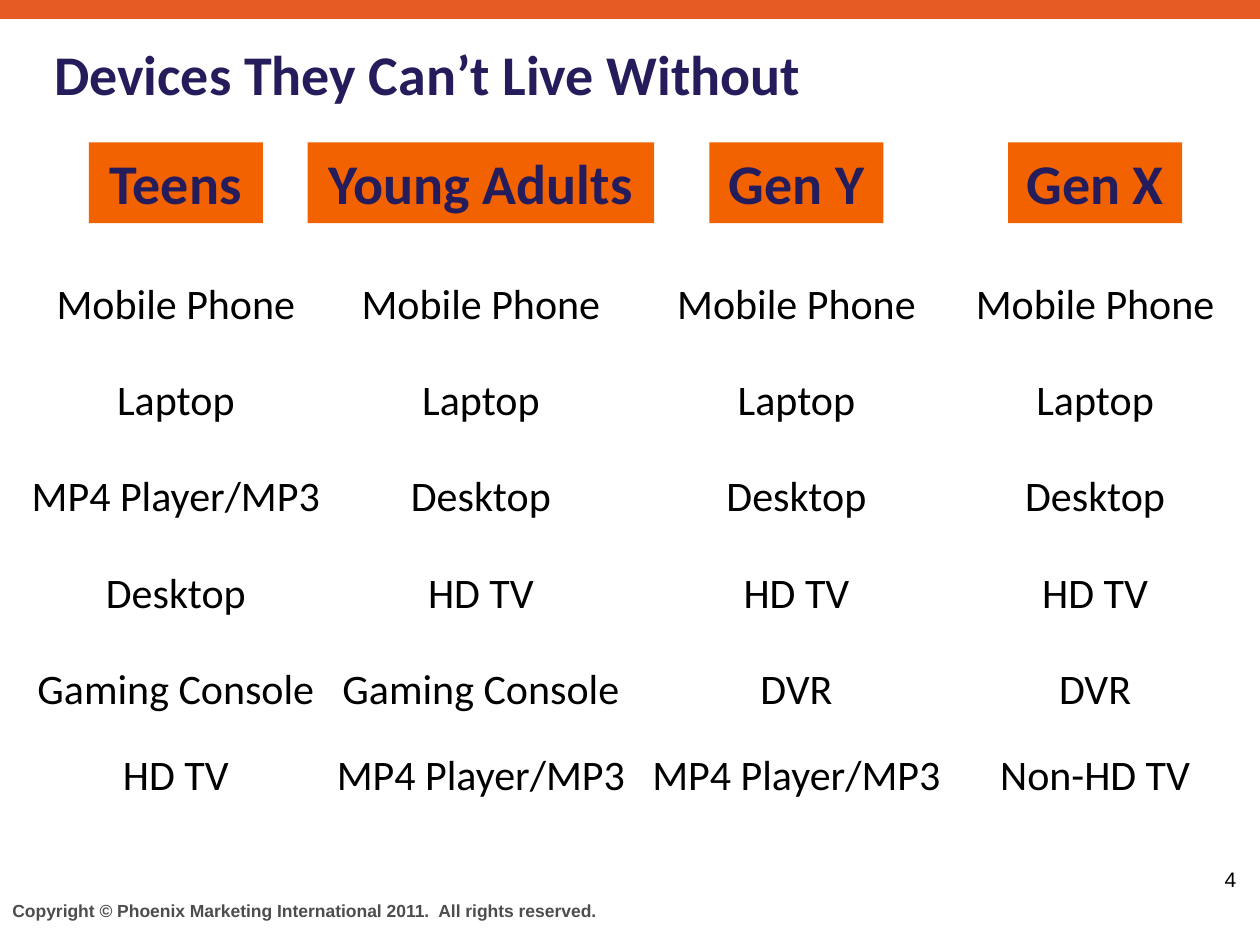
import pptx
import pptx.dml.color
import pptx.enum.shapes
import pptx.enum.text
import pptx.util

Pt = pptx.util.Pt
ALIGN = pptx.enum.text.PP_ALIGN
ANCHOR = pptx.enum.text.MSO_ANCHOR
GROW = pptx.enum.text.MSO_AUTO_SIZE.SHAPE_TO_FIT_TEXT

COLOURS = {"band": "E65B24", "header": "F26200", "navy": "241C5B",
           "black": "000000", "grey": "4D4D4D"}

FORMATS = {
    "title": {"name": "Calibri", "size": Pt(32), "bold": True},
    "device": {"name": "Calibri", "size": Pt(24), "bold": False},
    "page": {"name": "Arial", "size": Pt(12), "bold": False},
    "copyright": {"name": "Arial", "size": Pt(10), "bold": True},
}

# Audience, column centre, header width, devices in rank order
AUDIENCES = [
    ("Teens", 100.5, 99.4, ["Mobile Phone", "Laptop", "MP4 Player/MP3",
                            "Desktop", "Gaming Console", "HD TV"]),
    ("Young Adults", 274.8, 198, ["Mobile Phone", "Laptop", "Desktop",
                                  "HD TV", "Gaming Console", "MP4 Player/MP3"]),
    ("Gen Y", 455.1, 99.4, ["Mobile Phone", "Laptop", "Desktop",
                            "HD TV", "DVR", "MP4 Player/MP3"]),
    ("Gen X", 625.8, 99.4, ["Mobile Phone", "Laptop", "Desktop",
                            "HD TV", "DVR", "Non-HD TV"]),
]
HEADER_TOP, HEADER_HEIGHT = 81.4, 46.1
ROW_TOPS = [154.8 + 55.1 * rank for rank in range(5)] + [424.1]
ROW_HEIGHT = 36.3
DEVICE_WIDTH, LONG_DEVICE_WIDTH = 166.3, 182.2


class Deck:
    def __init__(self):
        self.presentation = pptx.Presentation()
        self.presentation.slide_width = Pt(720)
        self.presentation.slide_height = Pt(540)
        self.slide = self.presentation.slides.add_slide(
            self.presentation.slide_layouts[6])

    def colour(self, name):
        return pptx.dml.color.RGBColor.from_string(COLOURS[name])

    def set_line(self, holder, wording, style, colour, align=ALIGN.LEFT, **frame_format):
        """Fill a shape with one styled line; frame_format sets its text frame."""
        frame = holder.text_frame
        frame_values = {"word_wrap": True, "vertical_anchor": ANCHOR.TOP, **frame_format}
        for attribute, value in frame_values.items():
            setattr(frame, attribute, value)
        line = frame.paragraphs[0]
        line.alignment = align
        run = line.add_run()
        run.text = wording
        for attribute, value in FORMATS[style].items():
            setattr(run.font, attribute, value)
        run.font.color.rgb = self.colour(colour)

    def text(self, left, top, width, height, *wording_and_style, **layout):
        box = self.slide.shapes.add_textbox(Pt(left), Pt(top), Pt(width), Pt(height))
        self.set_line(box, *wording_and_style, **layout)

    def bar(self, left, top, width, height, fill):
        block = self.slide.shapes.add_shape(
            pptx.enum.shapes.MSO_SHAPE.RECTANGLE,
            Pt(left), Pt(top), Pt(width), Pt(height))
        block.shadow.inherit = False
        block.fill.solid()
        block.fill.fore_color.rgb = self.colour(fill)
        block.line.fill.background()
        return block

    def header(self, centre, width, audience):
        block = self.bar(centre - width / 2, HEADER_TOP, width, HEADER_HEIGHT, "header")
        self.set_line(block, audience, "title", "navy", ALIGN.CENTER, auto_size=GROW)

    def device(self, centre, top, name):
        width = LONG_DEVICE_WIDTH if len(name) > 12 else DEVICE_WIDTH
        self.text(centre - width / 2, top, width, ROW_HEIGHT,
                  name, "device", "black", ALIGN.CENTER, auto_size=GROW)


def main():
    deck = Deck()
    deck.bar(0, 0, 720, 10.8, "band")
    deck.text(684.7, 491.8, 28.8, 21.6, "4", "page", "black", ALIGN.RIGHT,
              word_wrap=False, auto_size=GROW)
    deck.text(0, 510.5, 473.8, 20.9,
              "Copyright © Phoenix Marketing International 2011.  All rights reserved.",
              "copyright", "grey")
    deck.text(23.8, 5.8, 666, 72, "Devices They Can’t Live Without",
              "title", "navy", vertical_anchor=ANCHOR.MIDDLE)
    for audience, centre, header_width, devices in AUDIENCES:
        deck.header(centre, header_width, audience)
        for top, name in zip(ROW_TOPS, devices):
            deck.device(centre, top, name)
    deck.presentation.save("out.pptx")


if __name__ == "__main__":
    main()
